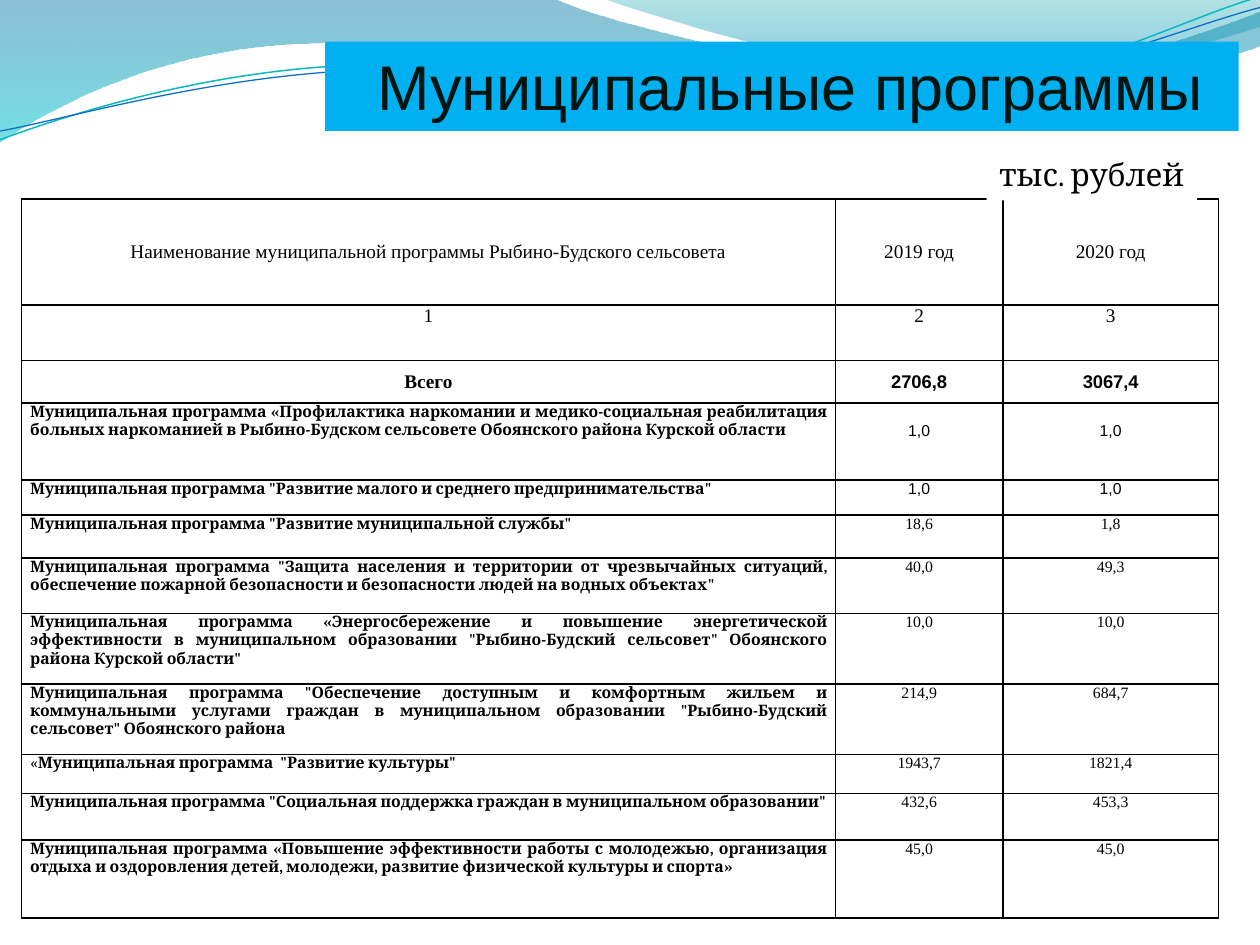
import pptx
import pptx.dml.color
import pptx.enum.shapes
import pptx.enum.text
import pptx.oxml.ns
import pptx.util
import lxml.etree
from dataclasses import dataclass

Inches = pptx.util.Inches
Align = pptx.enum.text.PP_ALIGN
Anchor = pptx.enum.text.MSO_ANCHOR
qn = pptx.oxml.ns.qn


@dataclass(frozen=True)
class Theme:
    black: str = "000000"
    white: str = "FFFFFF"
    banner: str = "00B0F0"
    banner_text: str = "021510"
    banner_space: str = "0070C0"
    teal_line: str = "0AB8BF"
    blue_line: str = "0F6FC6"
    left_wave: tuple = ((0, "0074A1", 45), (1, "00C6CF", 55))
    right_wave: tuple = ((0, "00A1A9", 30), (0.8, "008BBF", 45))
    sans: str = "Arial"
    serif: str = "Times New Roman"
    heading: str = "Cambria"
    title_size: float = 36
    unit_size: float = 18
    header_size: float = 11
    total_size: float = 10.5
    body_size: float = 9


THEME = Theme()


def rgb(value):
    return pptx.dml.color.RGBColor.from_string(value)


class SlideBuilder:
    def __init__(self, slide, theme):
        self.slide = slide
        self.theme = theme

    def outline(self, start, segments, closed):
        points = [segment[i:i + 2] for segment in segments for i in range(0, len(segment), 2)]
        builder = self.slide.shapes.build_freeform(Inches(start[0]), Inches(start[1]))
        builder.add_line_segments([(Inches(x), Inches(y)) for x, y in points], close=closed)
        shape = builder.convert_to_shape()
        shape.shadow.inherit = False
        lines = iter(list(shape.element.iter(qn("a:lnTo"))))
        for segment in segments:
            first = next(lines)
            if len(segment) == 6:
                first.tag = qn("a:cubicBezTo")
                for line in (next(lines), next(lines)):
                    first.append(line[0])
                    line.getparent().remove(line)
        return shape

    def wave(self, start, segments, stops):
        shape = self.outline(start, segments, True)
        shape.line.fill.background()
        shape.fill.gradient()
        shape.fill.gradient_angle = 270
        for stop, (position, color, _) in zip(shape.fill.gradient_stops, stops):
            stop.position = position
            stop.color.rgb = rgb(color)
        for node, (_, _, opacity) in zip(shape.element.iter(qn("a:srgbClr")), stops):
            lxml.etree.SubElement(node, qn("a:alpha"), val=str(opacity * 1000))

    def stroke(self, start, segments, color, width):
        shape = self.outline(start, segments, False)
        shape.fill.background()
        shape.line.color.rgb = rgb(color)
        shape.line.width = pptx.util.Pt(width)

    def run(self, para, text, size, font, color, bold=False):
        span = para.add_run()
        span.text = text
        span.font.size = pptx.util.Pt(size)
        span.font.name = font
        span.font.bold = bold
        span.font.color.rgb = rgb(color)

    def box(self, left, top, width, height, fill, anchor, spans):
        box = self.slide.shapes.add_shape(
            pptx.enum.shapes.MSO_SHAPE.RECTANGLE,
            Inches(left), Inches(top), Inches(width), Inches(height))
        box.shadow.inherit = False
        box.fill.solid()
        box.fill.fore_color.rgb = rgb(fill)
        box.line.fill.background()
        box.text_frame.word_wrap = True
        box.text_frame.vertical_anchor = anchor
        para = box.text_frame.paragraphs[0]
        para.alignment = Align.CENTER
        for span in spans:
            self.run(para, *span)

    def cell(self, cell, spans, align=Align.CENTER, anchor=Anchor.TOP, top=0):
        properties = cell._tc.get_or_add_tcPr()
        for side in ("lnL", "lnR", "lnT", "lnB"):
            line = lxml.etree.SubElement(properties, qn("a:" + side), w=str(pptx.util.Pt(1)))
            fill = lxml.etree.SubElement(line, qn("a:solidFill"))
            lxml.etree.SubElement(fill, qn("a:srgbClr"), val=self.theme.black)
        cell.fill.background()
        cell.margin_left = cell.margin_right = Inches(0.07)
        cell.margin_top = Inches(top)
        cell.margin_bottom = 0
        cell.vertical_anchor = anchor
        para = cell.text_frame.paragraphs[0]
        para.alignment = align
        for text, size, font, bold in spans:
            self.run(para, text, size, font, self.theme.black, bold)

    def table(self, left, top, widths, heights):
        frame = self.slide.shapes.add_table(
            len(heights), len(widths), Inches(left), Inches(top),
            Inches(sum(widths)), Inches(sum(heights)))
        table = frame.table
        table.first_row = table.horz_banding = False
        for column, width in zip(table.columns, widths):
            column.width = Inches(width)
        for row, height in zip(table.rows, heights):
            row.height = Inches(height)
        return table


HEADERS = [
    (0.84, Anchor.MIDDLE, ("Наименование муниципальной программы Рыбино-Будского сельсовета",
                           "2019 год", "2020 год")),
    (0.44, Anchor.TOP, ("1", "2", "3")),
]
TOTAL = (0.34, "Всего", ("2706,8", "3067,4"))
PROGRAMS = [
    (0.61, 'Муниципальная программа «Профилактика наркомании и медико-социальная реабилитация больных наркоманией в Рыбино-Будском сельсовете Обоянского района Курской области', ("1,0", "1,0"), THEME.sans, 0.15),
    (0.28, 'Муниципальная программа "Развитие малого и среднего предпринимательства"', ("1,0", "1,0"), THEME.sans, 0),
    (0.34, 'Муниципальная программа "Развитие муниципальной службы"', ("18,6", "1,8"), THEME.serif, 0),
    (0.44, 'Муниципальная программа "Защита населения и территории от чрезвычайных ситуаций, обеспечение пожарной безопасности и безопасности людей на водных объектах"', ("40,0", "49,3"), THEME.serif, 0),
    (0.56, 'Муниципальная программа «Энергосбережение и повышение энергетической эффективности в муниципальном образовании "Рыбино-Будский сельсовет" Обоянского района Курской области"', ("10,0", "10,0"), THEME.serif, 0),
    (0.56, 'Муниципальная программа "Обеспечение доступным и комфортным жильем и коммунальными услугами граждан в муниципальном образовании "Рыбино-Будский сельсовет" Обоянского района ', ("214,9", "684,7"), THEME.serif, 0),
    (0.31, '«Муниципальная программа  "Развитие культуры"', ("1943,7", "1821,4"), THEME.serif, 0),
    (0.37, 'Муниципальная программа "Социальная поддержка граждан в муниципальном образовании"', ("432,6", "453,3"), THEME.serif, 0),
    (0.62, 'Муниципальная программа «Повышение эффективности работы с молодежью, организация отдыха и оздоровления детей, молодежи, развитие физической культуры и спорта»', ("45,0", "45,0"), THEME.serif, 0),
]


def draw_waves(page):
    page.wave((0, 0), [(4.4, -0.01), (4.76, 0.17, 6.64, 0.63, 7.58, 0.63),
                       (8.53, 0.63, 9.58, 0.26, 10, 0.09), (10.01, 0.36),
                       (9.83, 0.44, 8.7, 0.76, 7.46, 0.75), (6.22, 0.75, 3.82, 0.28, 2.57, 0.34),
                       (1.29, 0.36, 0.46, 0.83, -0.01, 1.13)], THEME.left_wave)
    page.wave((4.79, -0.01), [(5.09, 0.11, 6.82, 0.62, 7.69, 0.65),
                              (8.56, 0.69, 9.61, 0.32, 10, 0.21), (10, 0)], THEME.right_wave)
    page.stroke((0, 1.11), [(0.48, 0.93, 1.58, 0.57, 2.77, 0.52), (3.95, 0.47, 5.93, 0.89, 7.13, 0.8),
                            (8.33, 0.71, 9.38, 0.15, 9.98, -0.02)], THEME.teal_line, 0.85)
    page.stroke((0, 1.04), [(0.47, 0.96, 1.64, 0.61, 2.83, 0.56), (4.03, 0.51, 5.97, 0.84, 7.17, 0.75),
                            (8.36, 0.67, 9.41, 0.21, 10, 0.06)], THEME.blue_line, 0.75)


def draw_programs(page):
    heights = [row[0] for row in [*HEADERS, TOTAL, *PROGRAMS]]
    table = page.table(0.17, 1.58, (6.46, 1.33, 1.71), heights)
    for row, (_, anchor, texts) in enumerate(HEADERS):
        for column, text in enumerate(texts):
            page.cell(table.cell(row, column), [(text, THEME.header_size, THEME.serif, False)], anchor=anchor)
    row = len(HEADERS)
    _, label, amounts = TOTAL
    page.cell(table.cell(row, 0), [(label, THEME.header_size, THEME.serif, True)], anchor=Anchor.MIDDLE)
    for column, amount in enumerate(amounts, 1):
        page.cell(table.cell(row, column), [(amount, THEME.total_size, THEME.sans, True)], anchor=Anchor.MIDDLE)
    for row, (_, name, amounts, font, top) in enumerate(PROGRAMS, row + 1):
        title = name.lstrip("«")
        parts = [(name[:len(name) - len(title)], False), (title, True)]
        spans = [(text, THEME.body_size, THEME.heading, bold) for text, bold in parts if text]
        page.cell(table.cell(row, 0), spans, align=Align.JUSTIFY)
        for column, amount in enumerate(amounts, 1):
            page.cell(table.cell(row, column), [(amount, THEME.body_size, font, False)], top=top)


def main():
    deck = pptx.Presentation()
    deck.slide_width, deck.slide_height = Inches(10), Inches(7.5)
    page = SlideBuilder(deck.slides.add_slide(deck.slide_layouts[6]), THEME)
    draw_waves(page)
    page.box(2.58, 0.33, 7.25, 0.71, THEME.banner, Anchor.TOP, [
        (" ", THEME.title_size, THEME.sans, THEME.banner_space),
        ("Муниципальные программы", THEME.title_size, THEME.sans, THEME.banner_text)])
    draw_programs(page)
    page.box(7.83, 1.17, 1.67, 0.42, THEME.white, Anchor.MIDDLE, [
        ("тыс. рублей", THEME.unit_size, THEME.heading, THEME.black)])
    deck.save("out.pptx")


if __name__ == "__main__":
    main()
